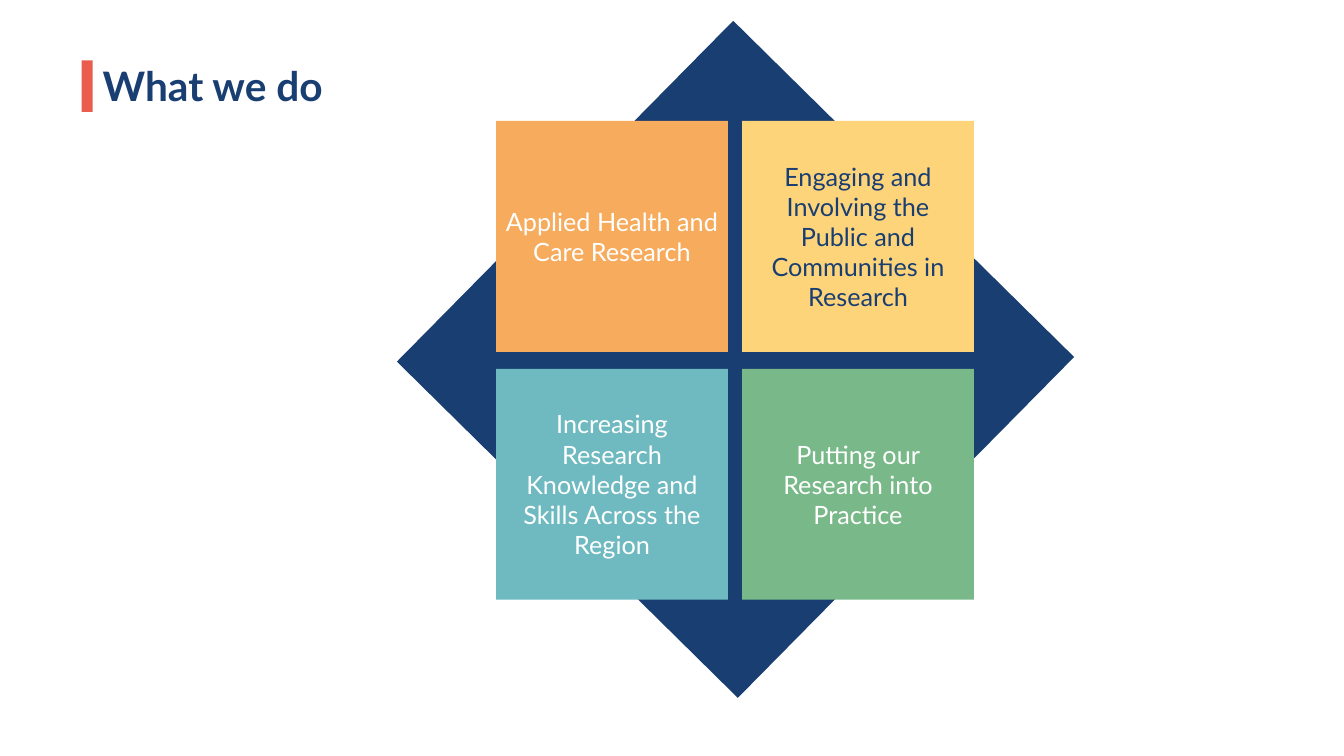
"""Build the "What we do" slide: four themes set on a turned square."""
from dataclasses import dataclass

from pptx import Presentation
from pptx.dml.color import RGBColor as Rgb
from pptx.enum.shapes import MSO_SHAPE as Kind
from pptx.enum.text import MSO_ANCHOR as Anchor, PP_ALIGN as Align
from pptx.shapes.autoshape import Shape
from pptx.slide import Slide
from pptx.util import Inches, Pt

NAVY = "193E72"
WHITE = "FFFFFF"
LEFT, TOP = 4.92, 1.2
WIDE, HIGH = 2.3, 2.29
STEP_X, STEP_Y = 2.44, 2.46
BODY = {"size": Pt(18), "name": "Lato", "bold": False}
HEAD = {"size": Pt(29), "name": "Lato", "bold": True}


@dataclass
class Theme:
    text: str
    fill: str
    ink: str = WHITE


THEMES = [
    Theme("Applied Health and Care Research", "F6AB5D"),
    Theme("Engaging and Involving the Public and Communities in Research", "FED47A", NAVY),
    Theme("Increasing Research Knowledge and Skills Across the Region", "6FBAC0"),
    Theme("Putting our Research into Practice", "79B989"),
]


def color(code: str) -> Rgb:
    """Turn a hex string into a colour."""
    return Rgb.from_string(code)


def add_rect(slide: Slide, x: float, y: float, w: float, h: float, fill: str) -> Shape:
    """Add a plain filled rectangle."""
    box = slide.shapes.add_shape(Kind.RECTANGLE, Inches(x), Inches(y), Inches(w), Inches(h))
    box.shadow.inherit = False
    box.fill.solid()
    box.fill.fore_color.rgb = color(fill)
    box.line.fill.background()
    return box


def write(box: Shape, text: str, form: dict, ink: str, align: Align, space: float = 1.0) -> None:
    """Put one formatted paragraph in a shape."""
    frame = box.text_frame
    frame.word_wrap = True
    frame.vertical_anchor = Anchor.MIDDLE
    para = frame.paragraphs[0]
    para.alignment = align
    para.line_spacing = space
    run = para.add_run()
    run.text = text
    for key, value in form.items():
        setattr(run.font, key, value)
    run.font.color.rgb = color(ink)


def main() -> None:
    """Draw the slide and save it."""
    deck = Presentation()
    deck.slide_width, deck.slide_height = Inches(13.33), Inches(7.5)
    slide = deck.slides.add_slide(deck.slide_layouts[6])

    add_rect(slide, LEFT, 1.19, 4.75, 4.75, NAVY).rotation = 44.6
    title = slide.shapes.add_textbox(Inches(0.92), Inches(0.4), Inches(11.5), Inches(0.95))
    write(title, "What we do", HEAD, NAVY, Align.LEFT, 0.9)

    for index, theme in enumerate(THEMES):
        row, col = divmod(index, 2)
        box = add_rect(slide, LEFT + col * STEP_X, TOP + row * STEP_Y, WIDE, HIGH, theme.fill)
        write(box, theme.text, BODY, theme.ink, Align.CENTER)

    add_rect(slide, 0.81, 0.6, 0.11, 0.51, "EA5D4E")
    deck.save("out.pptx")


if __name__ == "__main__":
    main()
